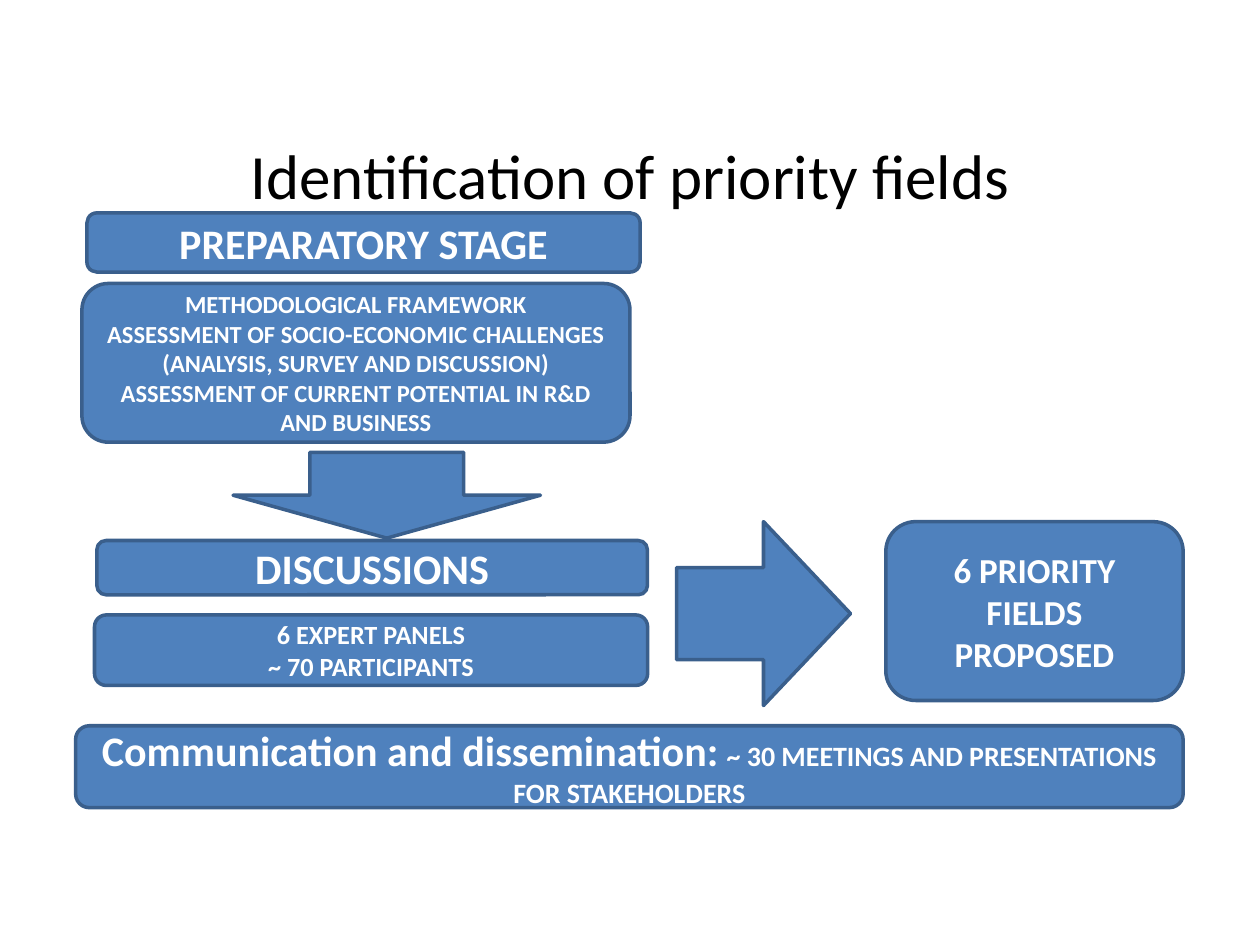
import pptx
import pptx.util
import pptx.dml.color
import pptx.enum.shapes
import pptx.enum.text

Pt = pptx.util.Pt
SHAPES = pptx.enum.shapes.MSO_SHAPE

THEME = {
    "font": "Calibri",
    "title_color": "000000",
    "box_text": "FFFFFF",
    "fill": "4F81BD",
    "line": "3A5F8C",
    "line_width": 2,
    "title": 36,
    "heading": 24,
    "outcome": 20,
    "note": 16,
    "panels": 15,
    "detail": 14,
}

TITLE = ("Identification of priority fields", (36, 77, 648, 45.4))

# Each box: (left, top, width, height), paragraphs of (text, size role) runs
BOXES = [
    ((55.4, 308.9, 314.6, 31), [[("DISCUSSIONS", "heading")]]),
    ((54, 351.4, 316.1, 40.3), [
        [("6 EXPERT PANELS", "panels")],
        [("~ 70 PARTICIPANTS", "panels")],
    ]),
    ((49.7, 121.7, 316.1, 33.8), [[("PREPARATORY STAGE", "heading")]]),
    ((46.8, 162, 313.2, 90.7), [
        [("METHODOLOGICAL FRAMEWORK", "detail")],
        [("ASSESSMENT OF SOCIO-ECONOMIC CHALLENGES (ANALYSIS, SURVEY AND DISCUSSION)", "detail")],
        [("ASSESSMENT OF CURRENT POTENTIAL IN R&D AND BUSINESS", "detail")],
    ]),
    ((43.2, 414.7, 632.9, 46.8), [[
        ("Communication and dissemination:", "heading"),
        (" ", "outcome"),
        ("~ 30 MEETINGS AND PRESENTATIONS FOR STAKEHOLDERS", "note"),
    ]]),
    ((506.2, 298.1, 169.9, 102.2), [[("6 PRIORITY FIELDS PROPOSED", "outcome")]]),
]

ARROWS = [
    (SHAPES.RIGHT_ARROW, (386.6, 298.1, 99.4, 105.1)),
    (SHAPES.DOWN_ARROW, (133.2, 258.5, 175.7, 49)),
]


def rgb(name):
    return pptx.dml.color.RGBColor.from_string(THEME[name])


def add_block(slide, kind, bounds):
    block = slide.shapes.add_shape(kind, *map(Pt, bounds))
    block.shadow.inherit = False
    block.fill.solid()
    block.fill.fore_color.rgb = rgb("fill")
    block.line.color.rgb = rgb("line")
    block.line.width = Pt(THEME["line_width"])
    return block


def write(frame, paragraphs, color, bold):
    """Fill a text frame with centred paragraphs of (text, size role) runs."""
    frame.word_wrap = True
    frame.vertical_anchor = pptx.enum.text.MSO_ANCHOR.MIDDLE
    for index, pieces in enumerate(paragraphs):
        paragraph = frame.add_paragraph() if index else frame.paragraphs[0]
        paragraph.alignment = pptx.enum.text.PP_ALIGN.CENTER
        for text, role in pieces:
            run = paragraph.add_run()
            run.text = text
            run.font.name = THEME["font"]
            run.font.size = Pt(THEME[role])
            run.font.bold = bold
            run.font.color.rgb = rgb(color)


def main():
    deck = pptx.Presentation()
    deck.slide_width, deck.slide_height = Pt(720), Pt(540)
    slide = deck.slides.add_slide(deck.slide_layouts[6])

    title, bounds = TITLE
    heading = slide.shapes.add_textbox(*map(Pt, bounds))
    write(heading.text_frame, [[(title, "title")]], "title_color", False)

    for bounds, paragraphs in BOXES:
        box = add_block(slide, SHAPES.ROUNDED_RECTANGLE, bounds)
        write(box.text_frame, paragraphs, "box_text", True)
    for kind, bounds in ARROWS:
        add_block(slide, kind, bounds)

    deck.save("out.pptx")


if __name__ == "__main__":
    main()
